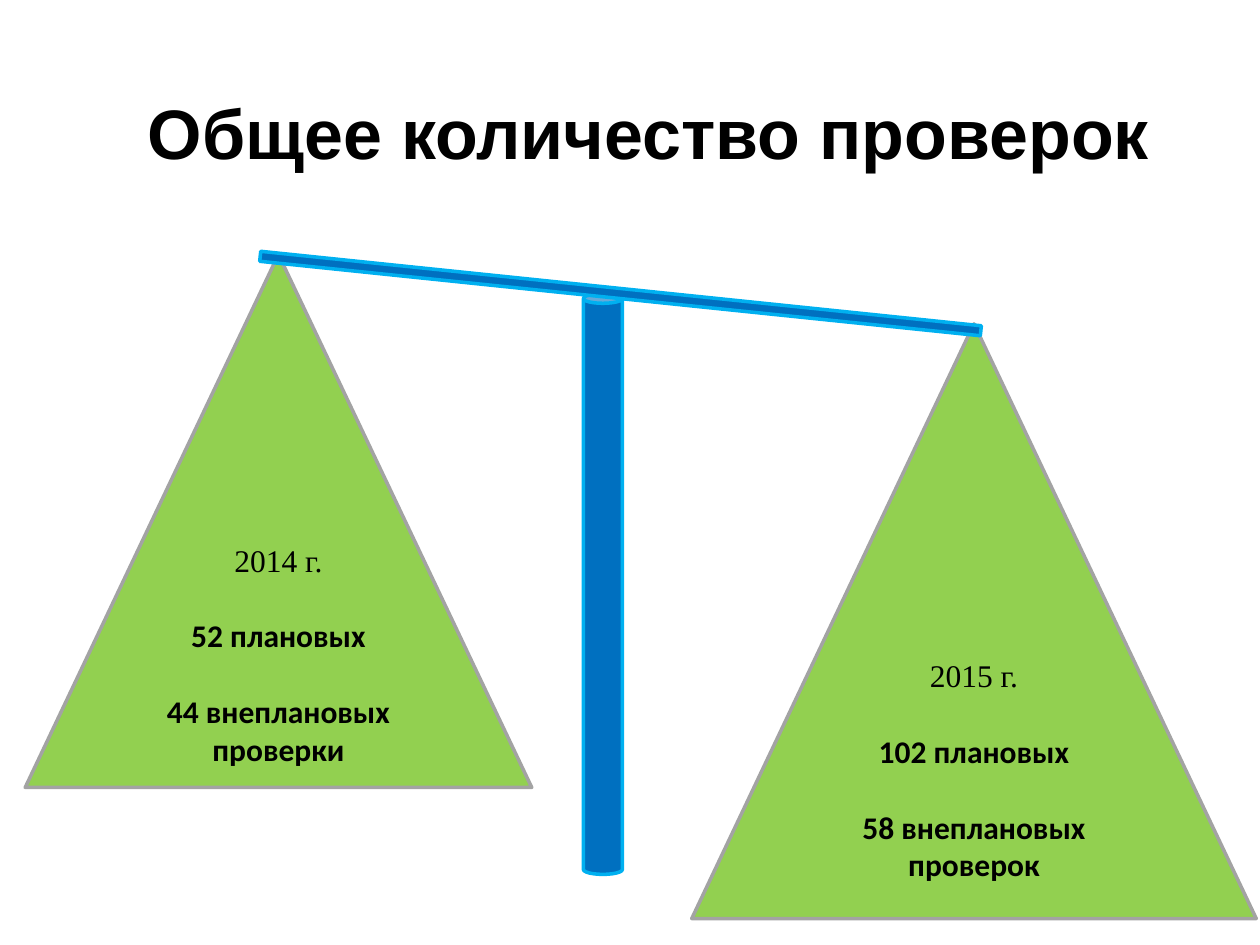
from dataclasses import dataclass

from pptx import Presentation
from pptx import util as u
from pptx.dml.color import RGBColor
from pptx.enum import shapes, text

COLUMNS, ROWS = 100, 75  # square grid cells on a 4:3 slide
CELL = u.Inches(0.1)


@dataclass(frozen=True)
class Theme:
    ink = RGBColor.from_string("000000")
    stand_fill = RGBColor.from_string("0070C0")
    stand_line = RGBColor.from_string("00B0F0")
    pan_fill = RGBColor.from_string("92D050")
    pan_line = RGBColor.from_string("A3A3A3")
    outline = u.Pt(2)
    title_size = u.Pt(40)
    label_size = u.Pt(18)
    label_gap = u.Pt(21.6)
    title_font = "Arial"
    year_font = "Times New Roman"
    count_font = "Calibri"


THEME = Theme()


def on_grid(*cells):
    """Turn left, top, width and height in grid cells into lengths."""
    return [round(cell * CELL) for cell in cells]


def style_paragraph(paragraph, font_name, size, bold):
    paragraph.alignment = text.PP_ALIGN.CENTER
    font = paragraph.font
    font.name, font.size, font.bold = font_name, size, bold
    font.color.rgb = THEME.ink


def add_part(slide, kind, area, fill, line):
    part = slide.shapes.add_shape(kind, *on_grid(*area))
    part.shadow.inherit = False
    part.fill.solid()
    part.fill.fore_color.rgb = fill
    part.line.color.rgb = line
    part.line.width = THEME.outline
    return part


def add_title(slide, wording, area):
    frame = slide.shapes.add_textbox(*on_grid(*area)).text_frame
    frame.word_wrap = True
    frame.vertical_anchor = text.MSO_ANCHOR.MIDDLE
    frame.text = wording
    style_paragraph(frame.paragraphs[0], THEME.title_font, THEME.title_size, True)


def add_stand_part(slide, kind, area, tilt=0):
    part = add_part(slide, kind, area, THEME.stand_fill, THEME.stand_line)
    part.rotation = tilt


def add_pan(slide, area, year, counts):
    """Add a triangular pan of the scales with a year and its check counts."""
    pan = add_part(slide, shapes.MSO_SHAPE.ISOSCELES_TRIANGLE, area,
                   THEME.pan_fill, THEME.pan_line)
    frame = pan.text_frame
    frame.word_wrap = True
    frame.vertical_anchor = text.MSO_ANCHOR.MIDDLE
    frame.text = year
    style_paragraph(frame.paragraphs[0], THEME.year_font, THEME.label_size, False)
    for count in counts:
        paragraph = frame.add_paragraph()
        paragraph.text = count
        paragraph.space_before = THEME.label_gap
        style_paragraph(paragraph, THEME.count_font, THEME.label_size, True)


def main():
    deck = Presentation()
    deck.slide_width, deck.slide_height = COLUMNS * CELL, ROWS * CELL
    slide = deck.slides.add_slide(deck.slide_layouts[6])

    add_stand_part(slide, shapes.MSO_SHAPE.CAN, (46.3, 23.3, 3.1, 46.1))
    add_title(slide, "Общее количество проверок", (5, 2.9, 92.9, 15))
    add_pan(slide, (2, 20.2, 40.2, 42.3), "2014 г.",
            ["52 плановых", "44 внеплановых проверки"])
    add_pan(slide, (54.9, 25.7, 44.8, 47.2), "2015 г.",
            ["102 плановых", "58 внеплановых проверок"])
    add_stand_part(slide, shapes.MSO_SHAPE.RECTANGLE, (20.5, 22.9, 57.5, 0.8), tilt=5.9)

    deck.save("out.pptx")


if __name__ == "__main__":
    main()
